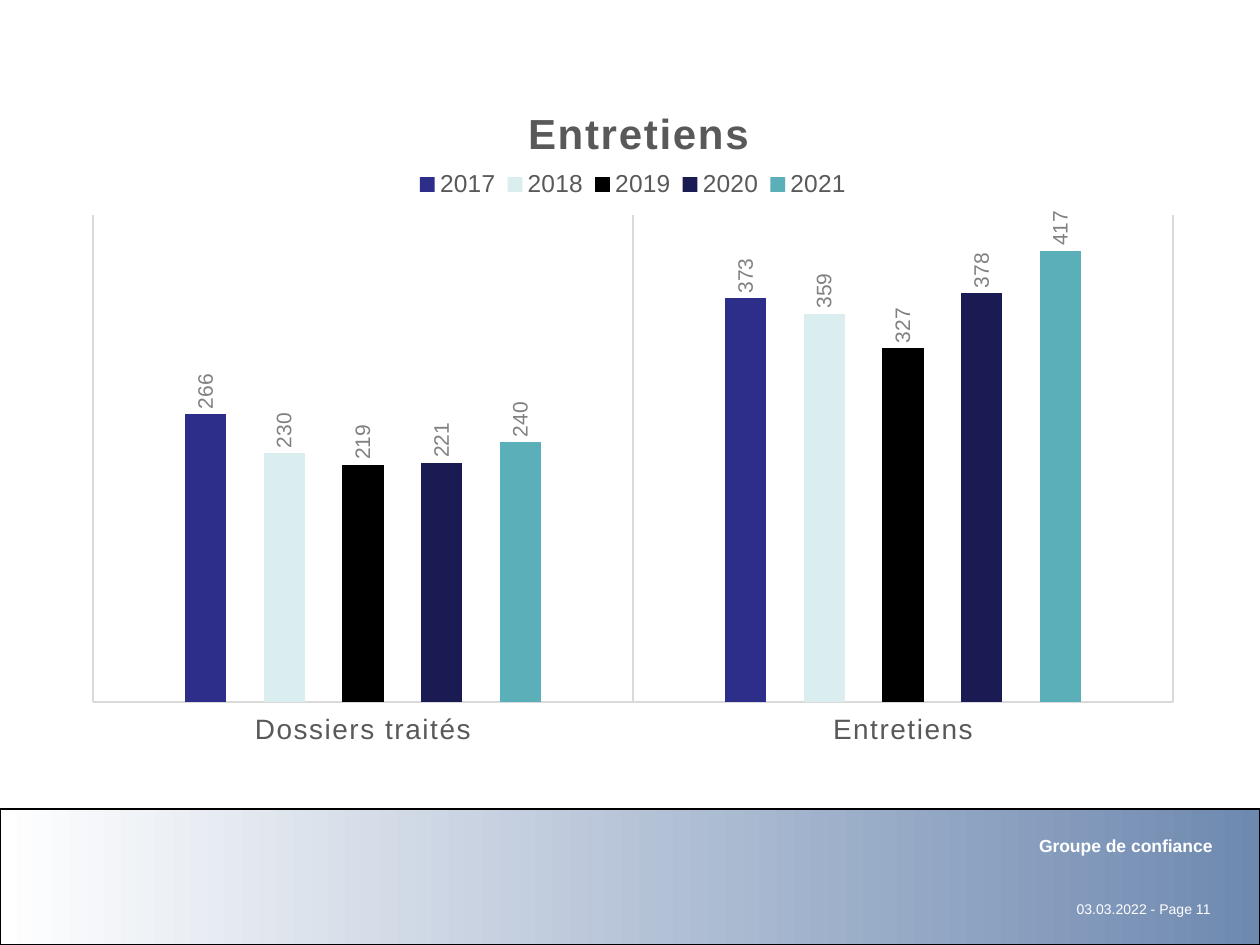
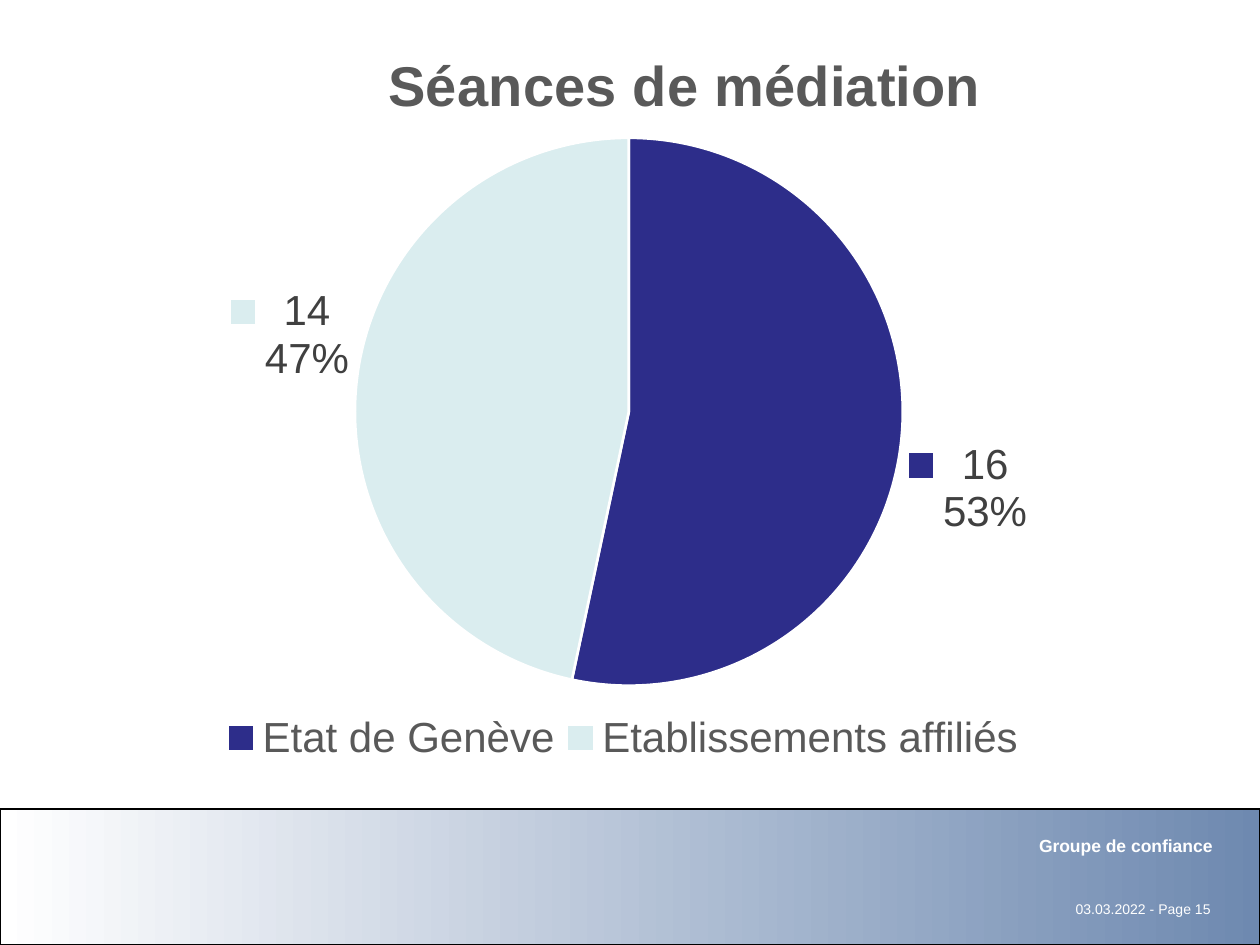
"""Build two slides of annual mediation statistics with a shared footer band."""
from dataclasses import dataclass

from lxml.etree import SubElement
from pptx import Presentation
from pptx.chart.chart import Chart
from pptx.chart.data import CategoryChartData
from pptx.dml.color import RGBColor
from pptx.enum.chart import XL_CHART_TYPE as ChartType
from pptx.enum.chart import XL_LABEL_POSITION as LabelPosition
from pptx.enum.chart import XL_LEGEND_POSITION as LegendPosition
from pptx.enum.chart import XL_TICK_LABEL_POSITION as TickLabelPosition
from pptx.enum.chart import XL_TICK_MARK as TickMark
from pptx.enum.shapes import MSO_SHAPE as Preset
from pptx.enum.text import PP_ALIGN as Align
from pptx.oxml.ns import qn
from pptx.slide import Slide
from pptx.text.text import Font
from pptx.util import Cm, Pt


@dataclass(frozen=True)
class Theme:
    """Colours and type sizes of the deck."""
    font: str = "Arial"
    white: str = "FFFFFF"
    black: str = "000000"
    band_blue: str = "6E89B0"
    heading: str = "595959"
    bar_label: str = "808080"
    slice_label: str = "404040"
    rule: str = "D9D9D9"
    palette: tuple[str, ...] = ("2D2D8A", "DAEDEF", "000000", "1B1B53", "5AAFB8")
    date_size: int = 8
    base_size: int = 10
    group_size: int = 10
    bar_label_size: int = 12
    bar_legend_size: int = 14
    category_size: int = 16
    bar_title_size: int = 24
    pie_text_size: int = 24
    pie_title_size: int = 32


@dataclass(frozen=True)
class Box:
    """Position and size in centimetres, or as fractions inside a chart."""
    x: float
    y: float
    w: float = 0
    h: float = 0

    def lengths(self) -> tuple[Cm, Cm, Cm, Cm]:
        """Return the box as slide lengths."""
        return Cm(self.x), Cm(self.y), Cm(self.w), Cm(self.h)


@dataclass(frozen=True)
class FooterLine:
    """One right-aligned line of the footer."""
    text: str
    box: Box
    size: int
    bold: bool = False


@dataclass(frozen=True)
class ChartSpec:
    """Content and arrangement of a chart."""
    kind: ChartType
    box: Box
    title: str
    title_size: int
    legend_position: LegendPosition
    legend_size: int
    categories: tuple[str, ...]
    series: dict[str, tuple[int, ...]]
    title_at: Box
    legend_at: Box
    plot_at: Box


THEME = Theme()
BAND = Box(0, 16.31, 25.4, 2.74)
GROUP_BOX = Box(3.86, 16.71, 20.83, 0.3)
DATE_BOX = Box(21.18, 18.03, 3.48, 0.58)

INTERVIEWS = ChartSpec(
    ChartType.COLUMN_CLUSTERED, Box(1.42, 1.3, 22.68, 13.82),
    "Entretiens", THEME.bar_title_size, LegendPosition.TOP, THEME.bar_legend_size,
    ("Dossiers traités", "Entretiens"),
    {"2017": (266, 373), "2018": (230, 359), "2019": (219, 327),
     "2020": (221, 378), "2021": (240, 417)},
    Box(0.4, 0.05), Box(0.3, 0.15, 0.4, 0.05), Box(0.02, 0.22, 0.96, 0.71),
)
MEDIATIONS = ChartSpec(
    ChartType.PIE, Box(0.81, 0.48, 23.5, 15.19),
    "Séances de médiation", THEME.pie_title_size, LegendPosition.BOTTOM,
    THEME.pie_text_size, ("Etat de Genève", "Etablissements affiliés"),
    {"Series 1": (16, 14)},
    Box(0.29, 0.02), Box(0.15, 0.92, 0.7, 0.07), Box(0.27, 0.15, 0.47, 0.73),
)


def rgb(value: str) -> RGBColor:
    """Turn a hexadecimal value into a colour."""
    return RGBColor.from_string(value)


def style_font(font: Font, size: int, color: str, bold: bool = False) -> None:
    """Apply the deck's typeface with a size, colour and weight."""
    font.name, font.size, font.bold = THEME.font, Pt(size), bold
    font.color.rgb = rgb(color)


def add_footer(slide: Slide, page: int) -> None:
    """Draw the gradient band with its two lines."""
    band = slide.shapes.add_shape(Preset.RECTANGLE, *BAND.lengths())
    band.shadow.inherit = False
    band.fill.gradient()
    band.fill.gradient_angle = 0
    for stop, color in zip(band.fill.gradient_stops, (THEME.white, THEME.band_blue)):
        stop.color.rgb = rgb(color)
    band.line.color.rgb = rgb(THEME.black)
    band.line.width = Pt(1)

    for line in (
        FooterLine(f"03.03.2022 - Page {page}", DATE_BOX, THEME.date_size),
        FooterLine("Groupe de confiance", GROUP_BOX, THEME.group_size, True),
    ):
        frame = slide.shapes.add_textbox(*line.box.lengths()).text_frame
        frame.word_wrap = True
        paragraph = frame.paragraphs[0]
        paragraph.alignment = Align.RIGHT
        run = paragraph.add_run()
        run.text = line.text
        style_font(run.font, line.size, THEME.white, line.bold)


def place(chart: Chart, part: str, box: Box, after: str = "") -> None:
    """Fix the place of a chart part, as fractions of the chart."""
    parent = next(chart.element.iter(qn(part)))
    for automatic in parent.findall(qn("c:layout")):
        parent.remove(automatic)
    layout = SubElement(parent, qn("c:layout"))
    anchor = parent.find(qn(after)) if after else None
    parent.insert(0 if anchor is None else parent.index(anchor) + 1, layout)
    manual = SubElement(layout, qn("c:manualLayout"))
    settings = {"xMode": "edge", "yMode": "edge", "x": box.x, "y": box.y}
    if box.w:
        settings |= {"w": box.w, "h": box.h}
    if part == "c:plotArea":
        settings = {"layoutTarget": "inner"} | settings
    for name, value in settings.items():
        SubElement(manual, qn(f"c:{name}")).set("val", str(value))


def add_statistics(slide: Slide, spec: ChartSpec) -> Chart:
    """Add a chart with its title, legend and arrangement."""
    data = CategoryChartData()
    data.categories = spec.categories
    for name, values in spec.series.items():
        data.add_series(name, values)
    chart = slide.shapes.add_chart(spec.kind, *spec.box.lengths(), data).chart
    style_font(chart.font, THEME.base_size, THEME.black)

    chart.has_title = True
    title = chart.chart_title.text_frame.paragraphs[0].add_run()
    title.text = spec.title
    style_font(title.font, spec.title_size, THEME.heading, True)

    chart.has_legend = True
    chart.legend.position = spec.legend_position
    chart.legend.include_in_layout = False
    style_font(chart.legend.font, spec.legend_size, THEME.heading)

    place(chart, "c:title", spec.title_at, "c:tx")
    place(chart, "c:legend", spec.legend_at, "c:legendPos")
    place(chart, "c:plotArea", spec.plot_at)
    return chart


def style_interviews(chart: Chart) -> None:
    """Format the yearly columns, their labels and axes."""
    plot = chart.plots[0]
    plot.gap_width, plot.overlap, plot.vary_by_categories = 444, -90, False
    for year, color in zip(plot.series, THEME.palette):
        year.format.fill.solid()
        year.format.fill.fore_color.rgb = rgb(color)
        labels = year.data_labels
        labels.show_value = True
        labels.position = LabelPosition.OUTSIDE_END
        style_font(labels.font, THEME.bar_label_size, THEME.bar_label)
    for labels in chart.element.iter(qn("c:dLbls")):
        body = next(labels.iter(qn("a:bodyPr")))
        body.set("rot", "-5400000")
        body.set("vert", "horz")

    counts = chart.value_axis
    counts.minimum_scale, counts.maximum_scale = 0, 450
    counts.has_major_gridlines = False
    counts.visible = False
    topics = chart.category_axis
    topics.major_tick_mark = topics.minor_tick_mark = TickMark.NONE
    topics.tick_label_position = TickLabelPosition.LOW
    topics.has_major_gridlines = True
    style_font(topics.tick_labels.font, THEME.category_size, THEME.heading)
    for rule in (topics.format.line, topics.major_gridlines.format.line):
        rule.color.rgb = rgb(THEME.rule)
        rule.width = Pt(0.75)

    axis = next(chart.element.iter(qn("c:catAx")))
    title = next(chart.element.iter(qn("c:title")))
    next(axis.iter(qn("a:defRPr"))).set("spc", "100")
    next(title.iter(qn("a:rPr"))).set("spc", "100")


def style_mediations(chart: Chart) -> None:
    """Format the slices and their value and percentage labels."""
    plot = chart.plots[0]
    plot.vary_by_categories = True
    sessions = plot.series[0]
    for index, color in enumerate(THEME.palette[:len(MEDIATIONS.categories)]):
        share = sessions.points[index].format
        share.fill.solid()
        share.fill.fore_color.rgb = rgb(color)
        share.line.color.rgb = rgb(THEME.white)
        share.line.width = Pt(1.5)
    labels = sessions.data_labels
    labels.show_value = labels.show_percentage = labels.show_legend_key = True
    labels.position = LabelPosition.OUTSIDE_END
    style_font(labels.font, THEME.pie_text_size, THEME.slice_label)
    label_xml = next(chart.element.iter(qn("c:dLbls")))
    separator = SubElement(label_xml, qn("c:separator"))
    separator.text = "\n"
    label_xml.find(qn("c:showBubbleSize")).addnext(separator)


def main() -> None:
    """Build and save the presentation."""
    deck = Presentation()
    deck.slide_width, deck.slide_height = Cm(25.4), Cm(19.05)
    for page, spec, style in (
        (11, INTERVIEWS, style_interviews),
        (15, MEDIATIONS, style_mediations),
    ):
        slide = deck.slides.add_slide(deck.slide_layouts[6])
        add_footer(slide, page)
        style(add_statistics(slide, spec))
    deck.save("out.pptx")


if __name__ == "__main__":
    main()
